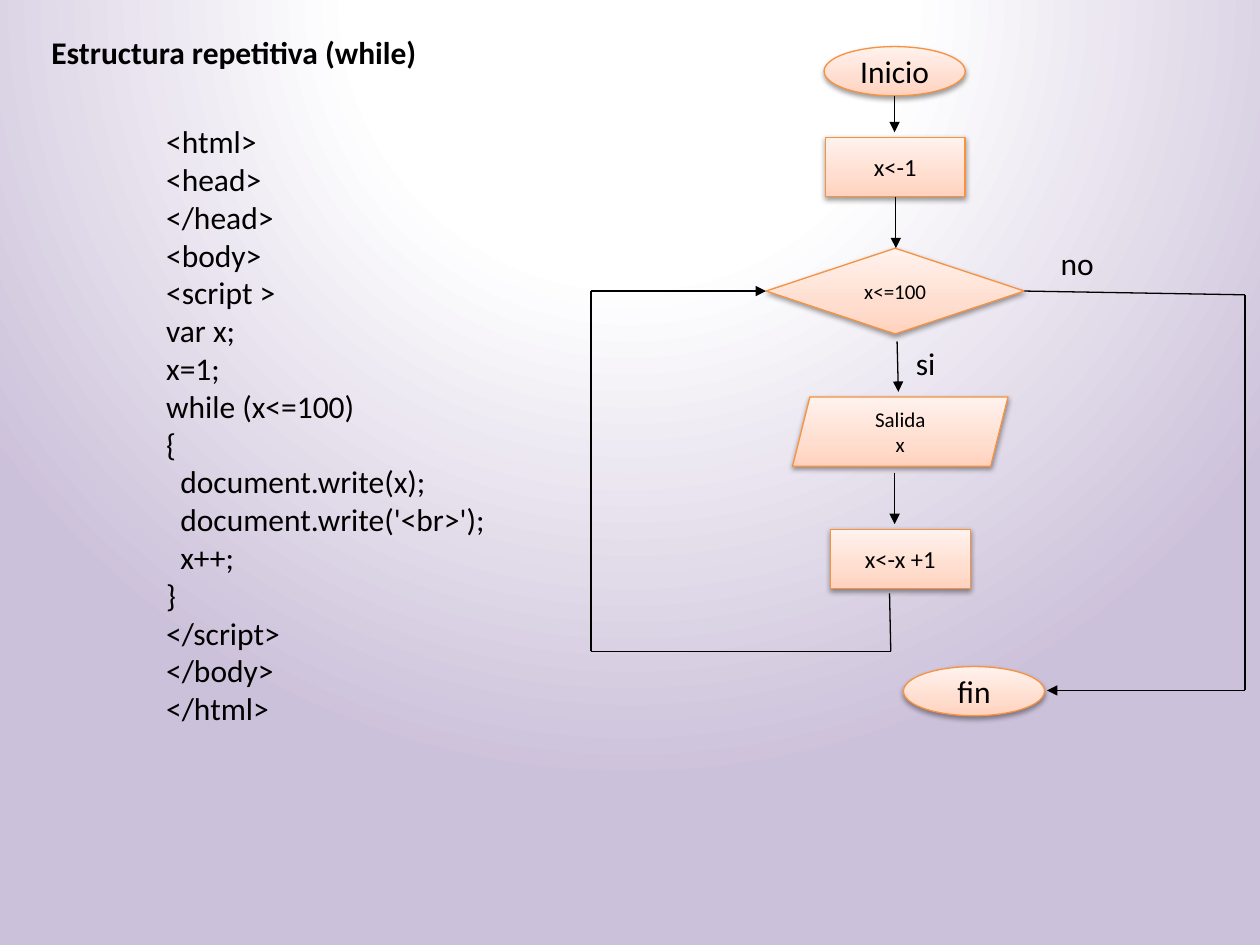
from dataclasses import dataclass

from lxml import etree
from pptx import Presentation
from pptx.dml.color import RGBColor
from pptx.enum.shapes import MSO_CONNECTOR, MSO_SHAPE
from pptx.enum.text import MSO_ANCHOR, MSO_AUTO_SIZE, PP_ALIGN
from pptx.oxml.ns import qn
from pptx.util import Inches, Pt

OVAL, RECT = MSO_SHAPE.OVAL, MSO_SHAPE.RECTANGLE
DIAMOND, PARALLELOGRAM = MSO_SHAPE.DIAMOND, MSO_SHAPE.PARALLELOGRAM
STRAIGHT = MSO_CONNECTOR.STRAIGHT
MIDDLE = MSO_ANCHOR.MIDDLE
CENTER, LEFT = PP_ALIGN.CENTER, PP_ALIGN.LEFT
FIT = MSO_AUTO_SIZE.SHAPE_TO_FIT_TEXT

FONT, BLACK, ORANGE = "Calibri", "000000", "F69240"
PEACH = [(0, "FFD2BD"), (35, "FFDED0"), (100, "FFF2ED")]
LILAC = [(0, "FFFFFF"), (35, "FFFFFF"), (100, "CCC1DA")]

CODE = """<html>
<head>
</head>
<body>
<script >
var x;
x=1;
while (x<=100)
{
  document.write(x);
  document.write('<br>');
  x++;
}
</script>
</body>
</html>"""


@dataclass
class Step:
    kind: int
    x: float
    y: float
    w: float
    h: float
    text: str
    size: int


@dataclass
class Label:
    x: float
    y: float
    w: float
    h: float
    text: str
    bold: bool = False
    wrap: bool = True


@dataclass
class Flow:
    points: list[tuple[float, float]]
    arrow: bool = True


LABELS = [
    Label(0.31, 0.21, 3.13, 0.4, "Estructura repetitiva (while)", bold=True, wrap=False),
    Label(1.22, 0.92, 5.91, 4.95, CODE),
    Label(7.17, 2.68, 0.39, 0.4, "si"),
    Label(8.32, 1.89, 0.56, 0.4, "no"),
]

STEPS = [
    Step(OVAL, 6.54, 0.37, 1.12, 0.39, "Inicio", 18),
    Step(RECT, 6.55, 1.09, 1.11, 0.47, "x<-1", 14),
    Step(DIAMOND, 6.08, 1.97, 2.05, 0.68, "x<=100", 12),
    Step(PARALLELOGRAM, 6.29, 3.15, 1.71, 0.55, "Salida\nx", 12),
    Step(RECT, 6.59, 4.2, 1.11, 0.47, "x<-x +1", 14),
    Step(OVAL, 7.17, 5.29, 1.12, 0.39, "fin", 18),
]

FLOWS = [
    Flow([(7.1, 0.76), (7.1, 1.05)]),
    Flow([(7.11, 1.56), (7.11, 1.97)]),
    Flow([(7.12, 2.71), (7.13, 3.11)]),
    Flow([(7.1, 3.75), (7.1, 4.16)]),
    Flow([(7.06, 4.71), (7.07, 5.17), (4.69, 5.17), (4.69, 2.31), (6.08, 2.31)]),
    Flow([(8.13, 2.31), (9.88, 2.34), (9.88, 5.48), (8.31, 5.48)]),
]


def color(value: str) -> RGBColor:
    return RGBColor.from_string(value)


def add_xml(parent, tag: str, **attrs):
    return etree.SubElement(parent, qn(tag), {k: str(v) for k, v in attrs.items()})


def set_gradient(owner, stops: list[tuple[int, str]]):
    owner.fill.gradient()
    grad = next(owner._element.iter(qn("a:gradFill")))
    for child in list(grad):
        grad.remove(child)
    grad.set("rotWithShape", "1")
    gs_list = add_xml(grad, "a:gsLst")
    for pos, value in stops:
        gs = add_xml(gs_list, "a:gs", pos=pos * 1000)
        add_xml(gs, "a:srgbClr", val=value)
    return grad


def set_background(s) -> None:
    s.background.fill.gradient()
    grad = set_gradient(s.background, LILAC)
    circle = add_xml(grad, "a:path", path="circle")
    add_xml(circle, "a:fillToRect", l=50000, t=-80000, r=50000, b=180000)


def write(tf, text: str, size: int = 18, bold: bool = False, align=LEFT) -> None:
    for i, line in enumerate(text.split("\n")):
        p = tf.add_paragraph() if i else tf.paragraphs[0]
        p.alignment = align
        r = p.add_run()
        r.text = line
        r.font.name, r.font.size, r.font.bold = FONT, Pt(size), bold
        r.font.color.rgb = color(BLACK)


def add_label(s, label: Label) -> None:
    box = (label.x, label.y, label.w, label.h)
    tf = s.shapes.add_textbox(*map(Inches, box)).text_frame
    tf.word_wrap = label.wrap
    tf.auto_size = FIT
    write(tf, label.text, bold=label.bold)


def add_step(s, step: Step) -> None:
    box = (step.x, step.y, step.w, step.h)
    sp = s.shapes.add_shape(step.kind, *map(Inches, box))
    grad = set_gradient(sp, PEACH)
    add_xml(grad, "a:lin", ang=270 * 60000, scaled=1)
    sp.line.color.rgb = color(ORANGE)
    sp.line.width = Pt(0.75)
    sp.shadow.inherit = False
    effects = next(sp._element.iter(qn("a:effectLst")))
    shadow = add_xml(effects, "a:outerShdw", blurRad=Pt(3.1), dist=Pt(1.6),
                     dir=90 * 60000, rotWithShape=0)
    add_xml(add_xml(shadow, "a:srgbClr", val=BLACK), "a:alpha", val=38000)
    tf = sp.text_frame
    tf.word_wrap = True
    tf.vertical_anchor = MIDDLE
    write(tf, step.text, step.size, align=CENTER)


def add_flow(s, flow: Flow) -> None:
    for start, end in zip(flow.points, flow.points[1:]):
        line = s.shapes.add_connector(STRAIGHT, *map(Inches, start + end))
        line.line.color.rgb = color(BLACK)
        line.line.width = Pt(0.75)
        if flow.arrow and end == flow.points[-1]:
            add_xml(line.line._get_or_add_ln(), "a:tailEnd", type="triangle")
        add_xml(line._element.spPr, "a:effectLst")


def main() -> None:
    prs = Presentation()
    prs.slide_width, prs.slide_height = Inches(10), Inches(7.5)
    s = prs.slides.add_slide(prs.slide_layouts[6])
    set_background(s)
    for label in LABELS:
        add_label(s, label)
    for step in STEPS:
        add_step(s, step)
    for flow in FLOWS:
        add_flow(s, flow)
    prs.save("out.pptx")


if __name__ == "__main__":
    main()
